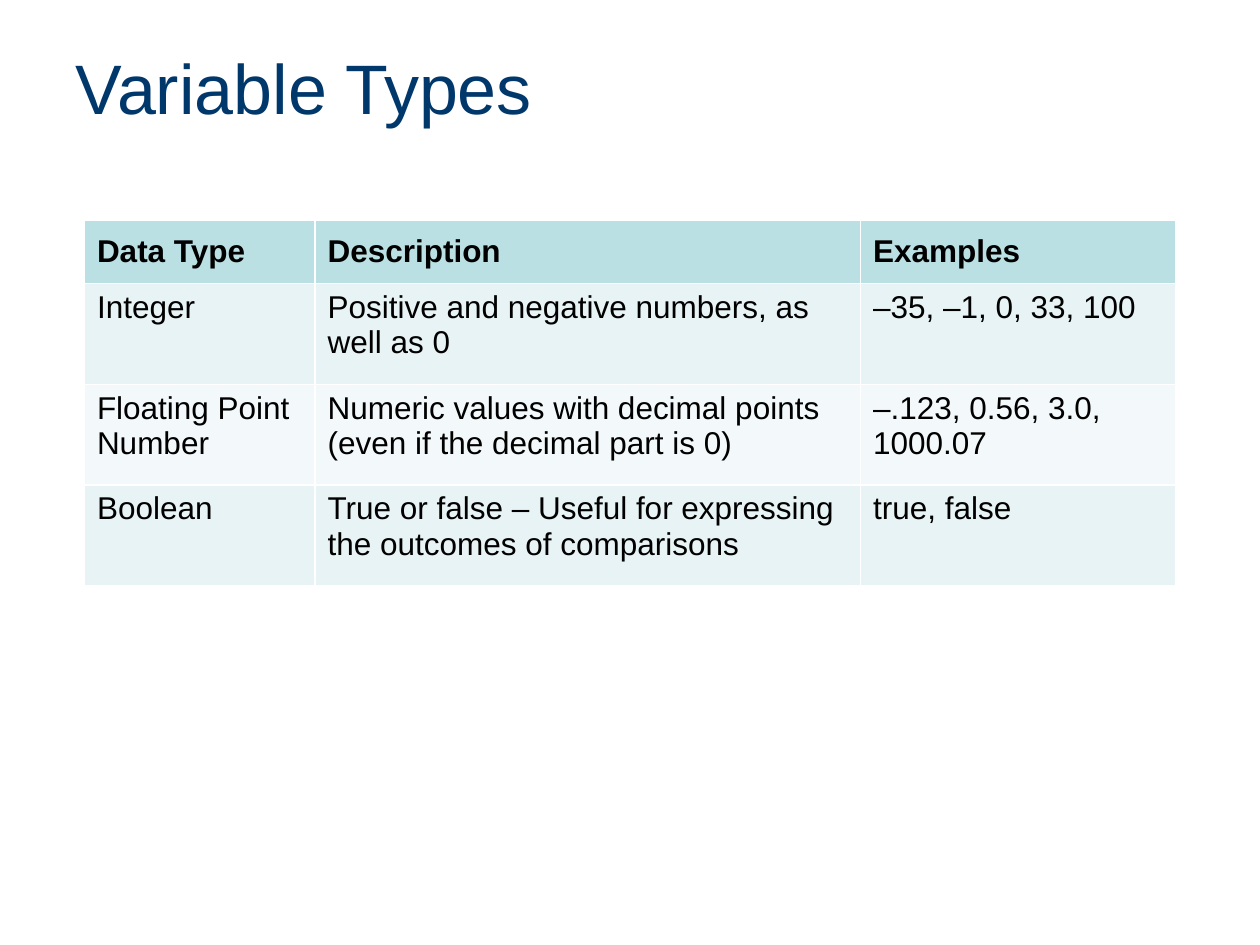
from pptx import Presentation
from pptx.dml.color import RGBColor
from pptx.enum.text import MSO_ANCHOR, PP_ALIGN
from pptx.util import Inches, Pt

HEADER_FILL = "BBE0E3"
BAND_FILLS = ("E7F3F4", "F3F9FA")
COLUMN_WIDTHS = (1.83, 4.33, 2.5)
HEADER_HEIGHT = 0.5
ROWS = (
    ("Data Type", "Description", "Examples"),
    ("Integer", "Positive and negative numbers, as well as 0", "–35, –1, 0, 33, 100"),
    (
        "Floating Point Number",
        "Numeric values with decimal points (even if the decimal part is 0)",
        "–.123, 0.56, 3.0, 1000.07",
    ),
    (
        "Boolean",
        "True or false – Useful for expressing the outcomes of comparisons",
        "true, false",
    ),
)


def color(value):
    """Turn a hex string into a colour."""
    return RGBColor.from_string(value)


def format_text(text_frame, size, hex_color, bold=False):
    """Format every run of a text frame."""
    for paragraph in text_frame.paragraphs:
        paragraph.alignment = PP_ALIGN.LEFT
        for run in paragraph.runs:
            run.font.name = "Arial"
            run.font.size = Pt(size)
            run.font.bold = bold
            run.font.color.rgb = color(hex_color)


def add_title(slide, text, left, top, width, height):
    """Place the slide title in the given box."""
    title = slide.shapes.title
    title.left, title.top, title.width, title.height = left, top, width, height
    title.text_frame.text = text
    title.text_frame.vertical_anchor = MSO_ANCHOR.MIDDLE
    format_text(title.text_frame, 40, "00386B")


def add_type_table(slide, rows, left, top, width, height):
    """Place the banded table of data types in the given box."""
    table = slide.shapes.add_table(
        len(rows), len(COLUMN_WIDTHS), left, top, width, height
    ).table
    for column, share in zip(table.columns, COLUMN_WIDTHS):
        column.width = int(width * share / sum(COLUMN_WIDTHS))
    header_height = Inches(HEADER_HEIGHT)
    for row_index, values in enumerate(rows):
        is_header = row_index == 0
        body_height = (height - header_height) // (len(rows) - 1)
        table.rows[row_index].height = header_height if is_header else body_height
        fill = HEADER_FILL if is_header else BAND_FILLS[(row_index - 1) % 2]
        for column_index, value in enumerate(values):
            cell = table.cell(row_index, column_index)
            cell.text_frame.text = value
            cell.vertical_anchor = MSO_ANCHOR.MIDDLE if is_header else MSO_ANCHOR.TOP
            cell.fill.solid()
            cell.fill.fore_color.rgb = color(fill)
            format_text(cell.text_frame, 18, "000000", bold=is_header)


def main():
    """Build and save the presentation."""
    presentation = Presentation()
    presentation.slide_width = Inches(10)
    presentation.slide_height = Inches(7.5)
    slide = presentation.slides.add_slide(presentation.slide_layouts[5])
    add_title(slide, "Variable Types", Inches(0.5), Inches(0.3), Inches(9), Inches(0.78))
    table_width = Inches(sum(COLUMN_WIDTHS))
    table_left = (presentation.slide_width - table_width) // 2
    add_type_table(slide, ROWS, table_left, Inches(1.75), table_width, Inches(2.9))
    presentation.save("out.pptx")


if __name__ == "__main__":
    main()
